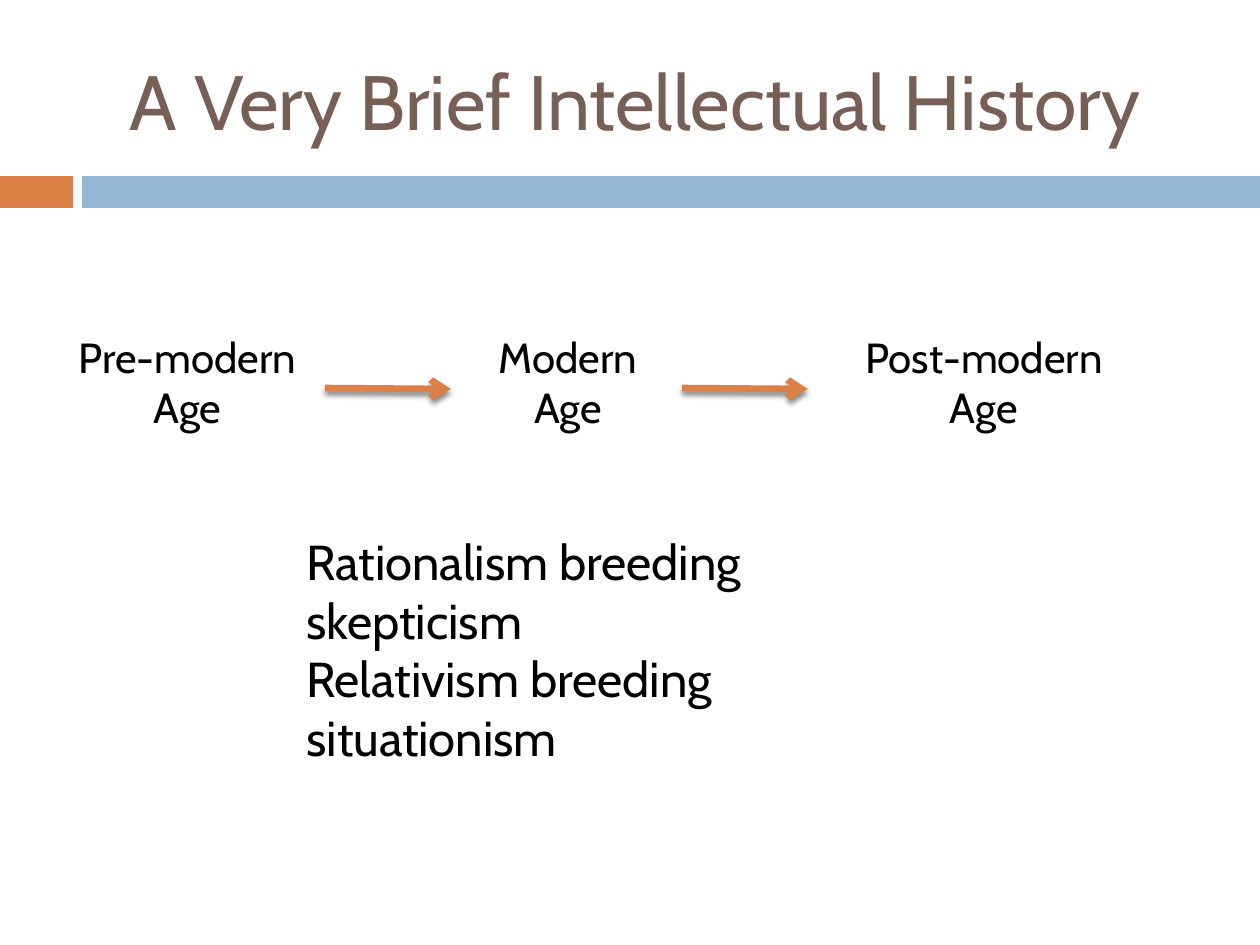
import pptx
import pptx.util
import pptx.dml.color
import pptx.enum.shapes
import pptx.enum.text
import pptx.oxml
import pptx.oxml.ns

PX = 914400 // 126
ORANGE = "DD8047"
BLUE = "94B6D2"
BROWN = "775F55"
BLACK = "000000"
CENTER = pptx.enum.text.PP_ALIGN.CENTER
LEFT = pptx.enum.text.PP_ALIGN.LEFT


def rgb(value):
    return pptx.dml.color.RGBColor.from_string(value)


def add_text(box, lines, size, color, alignment, wrap):
    shape = slide.shapes.add_textbox(*(length * PX for length in box))
    frame = shape.text_frame
    frame.word_wrap = wrap
    frame.text = "\n".join(lines)
    for paragraph in frame.paragraphs:
        paragraph.alignment = alignment
        paragraph.font.name = "Cabin"
        paragraph.font.size = pptx.util.Pt(size)
        paragraph.font.color.rgb = rgb(color)
    return frame


presentation = pptx.Presentation()
presentation.slide_width = 1260 * PX
presentation.slide_height = 945 * PX
slide = presentation.slides.add_slide(presentation.slide_layouts[6])

for left, width, color in [(0, 73, ORANGE), (82, 1178, BLUE)]:
    band = slide.shapes.add_shape(
        pptx.enum.shapes.MSO_SHAPE.RECTANGLE, left * PX, 176 * PX, width * PX, 32 * PX
    )
    band.shadow.inherit = False
    band.fill.solid()
    band.fill.fore_color.rgb = rgb(color)
    band.line.fill.background()

title = add_text(
    (63, 32, 1145, 136), ["A Very Brief Intellectual History"], 44, BROWN, CENTER, True
)
title.vertical_anchor = pptx.enum.text.MSO_ANCHOR.MIDDLE

for left, width, age in [(63, 249, "Pre-modern"), (483, 170, "Modern"), (850, 268, "Post-modern")]:
    add_text((left, 325, width, 115), [age, "Age"], 24, BLACK, CENTER, False)

for left in (325, 682):
    arrow = slide.shapes.add_connector(
        pptx.enum.shapes.MSO_CONNECTOR.STRAIGHT,
        left * PX, 388 * PX, (left + 126) * PX, 389 * PX,
    )
    arrow.line.color.rgb = rgb(ORANGE)
    arrow.line.width = pptx.util.Pt(3.75)
    namespace = pptx.oxml.ns.nsdecls("a")
    arrow.line._get_or_add_ln().append(
        pptx.oxml.parse_xml(f'<a:tailEnd {namespace} type="arrow"/>')
    )
    arrow._element.spPr.append(
        pptx.oxml.parse_xml(
            f'<a:effectLst {namespace}>'
            f'<a:outerShdw blurRad="{pptx.util.Pt(3)}" dist="{pptx.util.Pt(2.4)}"'
            ' dir="5400000" rotWithShape="0">'
            f'<a:srgbClr val="{BLACK}"><a:alpha val="45000"/></a:srgbClr>'
            '</a:outerShdw></a:effectLst>'
        )
    )

add_text(
    (294, 525, 646, 183),
    ["Rationalism breeding skepticism", "Relativism breeding situationism"],
    28, BLACK, LEFT, True,
)

presentation.save("out.pptx")
